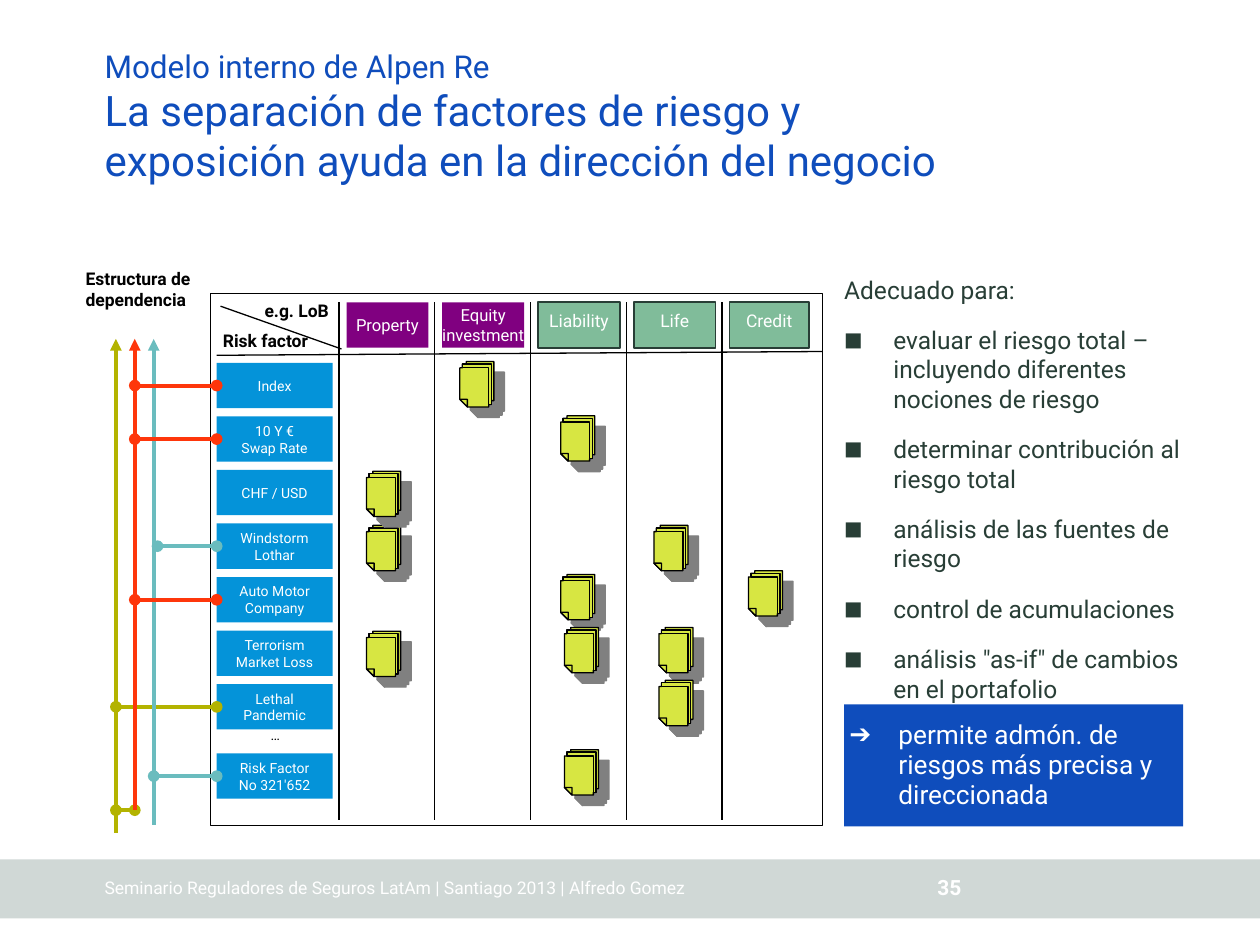
import pptx
import pptx.util
import pptx.dml.color
import pptx.enum.shapes
import pptx.enum.text
import pptx.oxml
import pptx.oxml.ns
from lxml import etree

Inches, Pt = pptx.util.Inches, pptx.util.Pt
RGB = pptx.dml.color.RGBColor.from_string
Align, Anchor = pptx.enum.text.PP_ALIGN, pptx.enum.text.MSO_ANCHOR
RECT = pptx.enum.shapes.MSO_SHAPE.RECTANGLE
STRAIGHT = pptx.enum.shapes.MSO_CONNECTOR.STRAIGHT
qn = pptx.oxml.ns.qn

HUES = {
    "white": "FFFFFF", "black": "000000", "ink": "020202", "dark": "283E36",
    "blue": "0F4DBC", "sky": "0493D9", "purple": "800080", "green": "80BC9A",
    "band": "D0D8D6", "lime": "D7E642", "shade": "808080",
    "olive": "B3B300", "teal": "6ABCBE", "red": "FE360B",
}

deck = pptx.Presentation()
deck.slide_width, deck.slide_height = Inches(10), Inches(7.5)
slide = deck.slides.add_slide(deck.slide_layouts[6])
shapes = slide.shapes


def write(text, box, size=10, hue="white", bold=False, align=Align.LEFT,
          anchor=Anchor.TOP, pad=(0, 0), wrap=True, fill=None, line=None):
    """Place text in a plain box, or in a rectangle when it has a fill."""
    spot = [Inches(v) for v in box]
    if fill:
        shape = shapes.add_shape(RECT, *spot)
        shape.shadow.inherit = False
        shape.fill.solid()
        shape.fill.fore_color.rgb = RGB(HUES[fill])
        if line:
            shape.line.color.rgb = RGB(HUES[line])
            shape.line.width = Pt(1)
        else:
            shape.line.fill.background()
    else:
        shape = shapes.add_textbox(*spot)
    frame = shape.text_frame
    frame.word_wrap = wrap
    frame.vertical_anchor = anchor
    frame.margin_left = frame.margin_right = Inches(pad[0])
    frame.margin_top = frame.margin_bottom = Inches(pad[1])
    frame.text = text
    for para in frame.paragraphs:
        para.alignment = align
        for run in para.runs:
            run.font.name, run.font.size, run.font.bold = "Roboto", Pt(size), bold
            run.font.color.rgb = RGB(HUES[hue])
    return shape


def draw(x1, y1, x2, y2, hue="black", width=0.75, head=None, tail=None):
    """Draw a straight line with optional ends."""
    link = shapes.add_connector(STRAIGHT, Inches(x1), Inches(y1), Inches(x2), Inches(y2))
    link.line.color.rgb = RGB(HUES[hue])
    link.line.width = Pt(width)
    for tag, kind in (("a:headEnd", head), ("a:tailEnd", tail)):
        if kind:
            etree.SubElement(link.line._ln, qn(tag), type=kind)
    etree.SubElement(link._element.spPr, qn("a:effectLst"))
    return link


# Footer
write("", (0, 6.82, 10, 0.47), fill="band")
write("Seminario Reguladores de Seguros LatAm | Santiago 2013 | Alfredo Gomez",
      (0.83, 6.98, 6.46, 0.15), anchor=Anchor.BOTTOM, wrap=False)
write("35", (7.44, 6.94, 0.2, 0.2), size=12, bold=True, anchor=Anchor.BOTTOM, wrap=False)

# Title
title = write("Modelo interno de Alpen Re\n"
              "La separación de factores de riesgo y exposición ayuda en la "
              "dirección del negocio",
              (0.83, 0.52, 6.85, 0.95), size=24, hue="blue", anchor=Anchor.BOTTOM)
title.text_frame.paragraphs[0].runs[0].font.size = Pt(18)

# Uses on the right
uses = write("\n".join([
    "Adecuado para:",
    "evaluar el riesgo total – incluyendo diferentes nociones de riesgo",
    "determinar contribución al riesgo total",
    "análisis de las fuentes de riesgo",
    "control de acumulaciones",
    'análisis "as-if" de cambios en el portafolio',
]), (6.7, 2.18, 2.7, 4.33), size=14, hue="dark")
note = write("permite admón. de riesgos más precisa y direccionada",
             (6.7, 5.59, 2.69, 0.97), size=15, fill="blue",
             anchor=Anchor.MIDDLE, pad=(0.04, 0))
note.text_frame.paragraphs[0].line_spacing = 0.96
points = uses.text_frame.paragraphs[1:]
for para in points:
    para.space_before = Pt(12)
for mark, scale, paras in (("■", 80, points), ("➔", 100, note.text_frame.paragraphs)):
    for para in paras:
        props = para._p.get_or_add_pPr()
        props.set("marL", str(Inches(0.39)))
        props.set("indent", str(-Inches(0.39)))
        etree.SubElement(props, qn("a:buSzPct"), val=str(scale * 1000))
        etree.SubElement(props, qn("a:buFont"), typeface="Roboto")
        etree.SubElement(props, qn("a:buChar"), char=mark)

# Matrix frame and rules
frame = shapes.add_shape(RECT, Inches(1.67), Inches(2.33), Inches(4.86), Inches(4.22))
frame.shadow.inherit = False
frame.fill.background()
frame.line.color.rgb = RGB(HUES["black"])
frame.line.width = Pt(0.75)
draw(1.72, 2.82, 6.53, 2.79)
draw(1.75, 2.43, 2.71, 2.77)

# Column heads
heads = [("Property", "purple"), ("Equity\ninvestment", "purple"),
         ("Liability", "green"), ("Life", "green"), ("Credit", "green")]
for col, (text, fill) in enumerate(heads):
    x = 2.69 + 0.76 * col
    draw(x, 2.4, x, 6.51)
    box = (x + 0.06, 2.4, 0.63 if text == "Credit" else 0.65, 0.36)
    if fill == "purple":
        write(text, box, size=9.5, fill=fill, align=Align.CENTER,
              anchor=Anchor.MIDDLE, pad=(0.2, 0.1), wrap=False)
    else:
        write(text, box, fill=fill, line="dark", align=Align.CENTER, pad=(0.06, 0.06))

# Labels; the corner boxes are wide enough for one line each
label = dict(hue="ink", bold=True, anchor=Anchor.MIDDLE)
write("e.g. LoB", (1.91, 2.33, 0.7, 0.27), align=Align.RIGHT, **label)
write("Risk factor", (1.77, 2.57, 0.84, 0.27), **label)
write("Estructura de dependencia", (0.59, 2.09, 1.17, 0.42),
      hue="black", bold=True, pad=(0.09, 0.04))
write("…", (1.88, 5.71, 0.61, 0.25), size=8, hue="black",
      align=Align.CENTER, pad=(0.06, 0.06))

# Risk factors; the last one stands apart
names = ["Index", "10 Y €\nSwap Rate", "CHF / USD", "Windstorm\nLothar",
         "Auto Motor\nCompany", "Terrorism\nMarket Loss", "Lethal\nPandemic",
         "Risk Factor\nNo 321'652"]
tops = [2.88 + 0.425 * row for row in range(7)] + [5.98]
rows = [write(text, (1.72, top, 0.92, 0.36), size=8, fill="sky", align=Align.CENTER,
              anchor=Anchor.MIDDLE, pad=(0.2, 0.1), wrap=False)
        for text, top in zip(names, tops)]

# Stacks of sheets, in hundredths of an inch
outer = [(0, 30), (0, 5), (2, 5), (2, 2), (5, 2), (5, 0), (27, 0), (27, 31),
         (25, 31), (25, 34), (23, 34), (23, 36), (6, 36)]
inner = [(5, 2), (25, 2), (25, 34), (23, 34), (23, 5), (2, 5), (2, 2)]
fold = [(0, 30), (6, 30), (6, 36)]
stacks = [(2.91, 4.17), (4.45, 4.56), (5.19, 4.17), (2.91, 3.74), (2.91, 5.01),
          (5.94, 4.53), (3.65, 2.87), (4.45, 3.3), (5.23, 4.98), (5.23, 5.4),
          (4.48, 4.98), (4.48, 5.95)]
for x, y in stacks:
    pen = shapes.build_freeform(*outer[0], scale=Inches(0.01))
    pen.add_line_segments(outer[1:], close=True)
    for ring in (inner, fold):
        pen.move_to(*ring[0])
        pen.add_line_segments(ring[1:], close=True)
    stack = pen.convert_to_shape(Inches(x), Inches(y))
    stack.fill.solid()
    stack.fill.fore_color.rgb = RGB(HUES["lime"])
    stack.line.color.rgb = RGB(HUES["black"])
    stack.line.width = Pt(0.75)
    # One path per ring, so that overlaps stay filled
    whole = next(stack._element.iter(qn("a:path")))
    group = whole.getparent()
    for node in list(whole):
        if node.tag == qn("a:moveTo"):
            part = etree.SubElement(group, qn("a:path"), w=whole.get("w"), h=whole.get("h"))
        part.append(node)
    group.remove(whole)
    # Hard shadow
    stack.shadow.inherit = False
    glow = stack._element.spPr.find(qn("a:effectLst"))
    cast = etree.SubElement(glow, qn("a:outerShdw"), dist=str(Pt(8.5)),
                            dir="2700000", algn="ctr", rotWithShape="0")
    etree.SubElement(cast, qn("a:srgbClr"), val=HUES["shade"])

# Dependency arrows, each with its links to risk factors
trees = [("olive", 0.92, 6.61, [(0.92, 6)]),
         ("teal", 1.22, 6.55, [(1.22, 7), (1.25, 3)]),
         ("red", 1.07, 6.43, [(1.07, 1), (1.07, 4), (1.07, 0)])]
dots = dict(width=2.25, head="oval", tail="oval")
for hue, x, end, links in trees:
    draw(x, 2.69, x, end, hue, 2.25, head="triangle")
    if hue == "olive":
        draw(x, 6.43, 1.07, 6.43, hue, **dots)
    for start, row in links:
        mid = tops[row] + 0.18
        draw(start, mid, 1.72, mid, hue, **dots).end_connect(rows[row], 1)

deck.save("out.pptx")
